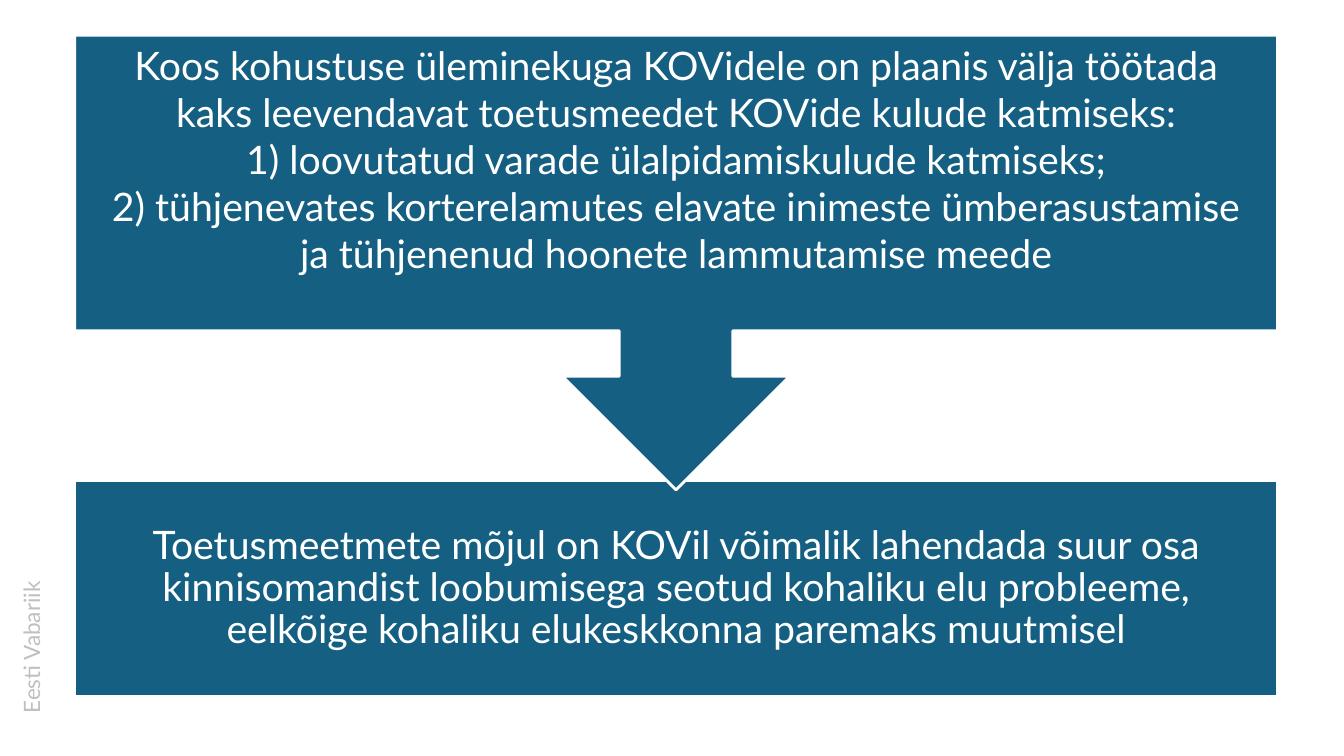
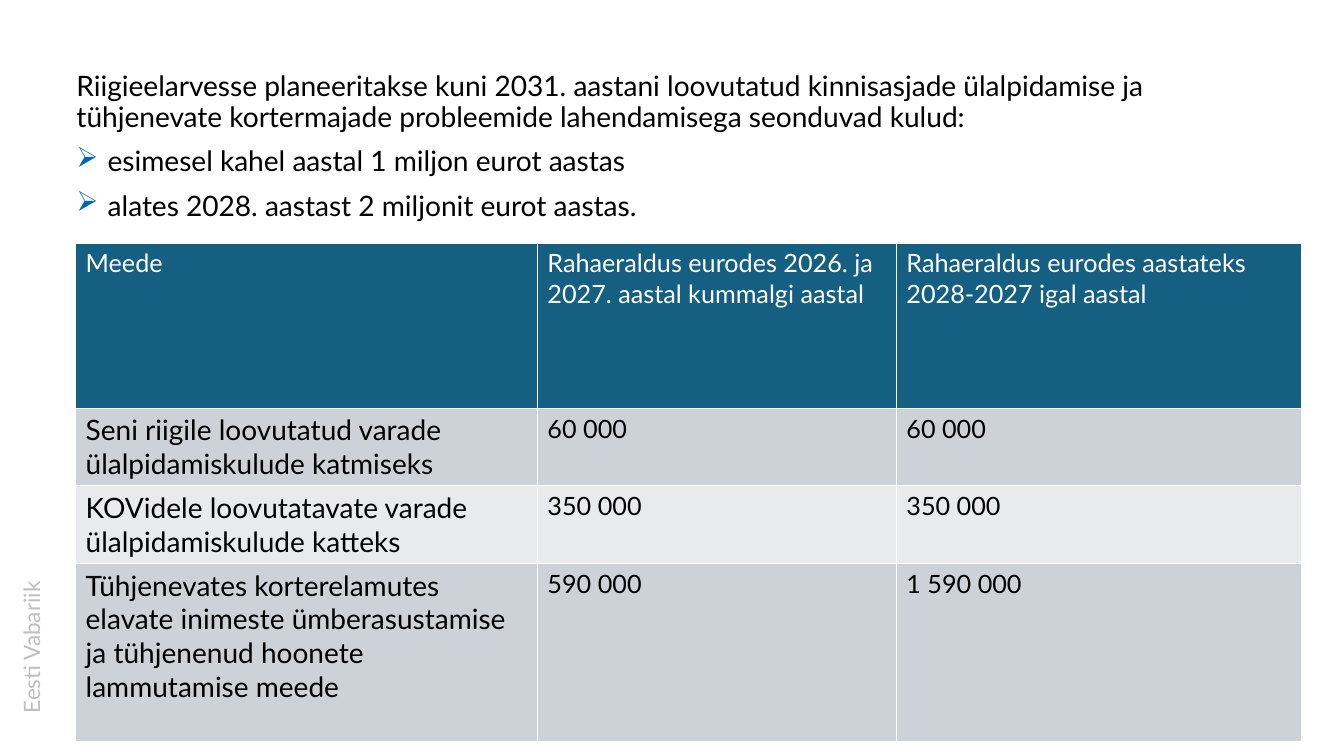
from lxml import etree
from pptx import Presentation
from pptx.dml.color import RGBColor
from pptx.enum import shapes, text
from pptx.oxml import ns
from pptx.util import Inches, Pt

# Shared look
FONT = "Lato"
TEAL, WHITE, BLACK = "156082", "FFFFFF", "000000"
LABEL_GREY, BULLET_BLUE = "BFBFBF", "0064B9"
BAND_FILLS = ["CCD2D8", "E8EAED"]
BLOCK_LEFT, BLOCK_WIDTH = 0.74, 11.93

CALLOUT_LINES = [
    "Koos kohustuse üleminekuga KOVidele on plaanis välja töötada "
    "kaks leevendavat toetusmeedet KOVide kulude katmiseks:",
    "1) loovutatud varade ülalpidamiskulude katmiseks;",
    "2) tühjenevates korterelamutes elavate inimeste ümberasustamise "
    "ja tühjenenud hoonete lammutamise meede",
]
RESULT = (
    "Toetusmeetmete mõjul on KOVil võimalik lahendada suur osa "
    "kinnisomandist loobumisega seotud kohaliku elu probleeme, "
    "eelkõige kohaliku elukeskkonna paremaks muutmisel"
)
BUDGET_INTRO = (
    "Riigieelarvesse planeeritakse kuni 2031. aastani loovutatud "
    "kinnisasjade ülalpidamise ja tühjenevate kortermajade probleemide "
    "lahendamisega seonduvad kulud:"
)
BUDGET_POINTS = [
    "esimesel kahel aastal 1 miljon eurot aastas",
    "alates 2028. aastast 2 miljonit eurot aastas.",
]
COLUMN_WIDTHS = [4.58, 3.56, 4.02]
ROW_HEIGHTS = [1.64, 0.77, 0.77, 1.77]
MEASURES = [
    ["Meede", "Rahaeraldus eurodes 2026. ja 2027. aastal kummalgi aastal",
     "Rahaeraldus eurodes aastateks 2028-2027 igal aastal"],
    ["Seni riigile loovutatud varade ülalpidamiskulude katmiseks",
     "60 000", "60 000"],
    ["KOVidele loovutatavate varade ülalpidamiskulude katteks",
     "350 000", "350 000"],
    ["Tühjenevates korterelamutes elavate inimeste ümberasustamise "
     "ja tühjenenud hoonete lammutamise meede", "590 000", "1 590 000"],
]


def color(value):
    return RGBColor.from_string(value)


def style(para, size, ink):
    para.font.name = FONT
    para.font.size = Pt(size)
    para.font.color.rgb = color(ink)


def add_text(page, at, lines, size, ink, align=text.PP_ALIGN.LEFT,
             anchor=text.MSO_ANCHOR.TOP, insets=(0.1, 0.05), spacing=None):
    """Add a text box; insets are the side and the top/bottom margin."""
    box = page.shapes.add_textbox(*map(Inches, at))
    frame = box.text_frame
    frame.word_wrap = True
    frame.vertical_anchor = anchor
    frame.margin_left = frame.margin_right = Inches(insets[0])
    frame.margin_top = frame.margin_bottom = Inches(insets[1])
    frame.text = "\n".join(lines)
    for para in frame.paragraphs:
        style(para, size, ink)
        para.alignment = align
        para.line_spacing = spacing
    return box


def add_block(page, kind, top, height):
    block = page.shapes.add_shape(
        kind, *map(Inches, (BLOCK_LEFT, top, BLOCK_WIDTH, height)))
    block.shadow.inherit = False
    block.fill.solid()
    block.fill.fore_color.rgb = color(TEAL)
    block.line.color.rgb = color(WHITE)
    block.line.width = Pt(2)
    return block


def add_bullet(para, indent):
    props = para._p.get_or_add_pPr()
    props.set("marL", str(Inches(indent)))
    props.set("indent", str(-Inches(indent)))
    tint = etree.SubElement(props, ns.qn("a:buClr"))
    etree.SubElement(tint, ns.qn("a:srgbClr"), val=BULLET_BLUE)
    etree.SubElement(props, ns.qn("a:buChar"), char="➢")


def fill_cell(cell, words, size, ink, fill):
    cell.text = words
    style(cell.text_frame.paragraphs[0], size, ink)
    props = cell._tc.get_or_add_tcPr()
    for side in ("a:lnL", "a:lnR", "a:lnT", "a:lnB"):
        border = etree.SubElement(props, ns.qn(side), w=str(Pt(1)))
        solid = etree.SubElement(border, ns.qn("a:solidFill"))
        etree.SubElement(solid, ns.qn("a:srgbClr"), val=WHITE)
    cell.fill.solid()
    cell.fill.fore_color.rgb = color(fill)


def add_measure_table(page, left, top):
    table = page.shapes.add_table(
        len(MEASURES), len(COLUMN_WIDTHS), Inches(left), Inches(top),
        Inches(sum(COLUMN_WIDTHS)), Inches(sum(ROW_HEIGHTS))).table
    for column, width in zip(table.columns, COLUMN_WIDTHS):
        column.width = Inches(width)
    for row_index, values in enumerate(MEASURES):
        table.rows[row_index].height = Inches(ROW_HEIGHTS[row_index])
        is_header = row_index == 0
        fill = TEAL if is_header else BAND_FILLS[(row_index - 1) % 2]
        for column_index, words in enumerate(values):
            size = 20 if column_index == 0 and not is_header else 18
            fill_cell(table.cell(row_index, column_index), words, size,
                      WHITE if is_header else BLACK, fill)


def add_page(deck):
    """Add a blank page with the shared side label."""
    page = deck.slides.add_slide(deck.slide_layouts[6])
    label = add_text(page, (-0.53, 6.15, 1.68, 0.37), ["Eesti Vabariik"],
                     16.1, LABEL_GREY)
    label.rotation = 270
    return page


def add_support_page(deck):
    page = add_page(deck)
    centre = text.PP_ALIGN.CENTER
    # Result block, overlapped by the tip of the callout
    add_block(page, shapes.MSO_SHAPE.RECTANGLE, 4.77, 2.14)
    add_text(page, (BLOCK_LEFT, 4.77, BLOCK_WIDTH, 2.14), [RESULT], 28, WHITE,
             centre, text.MSO_ANCHOR.MIDDLE, (0.22, 0.22), 0.9)
    # Callout pointing down
    callout = add_block(page, shapes.MSO_SHAPE.UP_ARROW_CALLOUT, 0.35, 4.51)
    callout.rotation = 180
    add_text(page, (BLOCK_LEFT, 0.35, BLOCK_WIDTH, 2.93), CALLOUT_LINES, 28,
             WHITE, centre, insets=(0.22, 0.06))


def add_budget_page(deck):
    page = add_page(deck)
    # Introduction and bullets
    body = add_text(page, (0.66, 0.67, 11.92, 1.7),
                    [BUDGET_INTRO] + BUDGET_POINTS, 20.1, BLACK, spacing=0.9)
    intro, *points = body.text_frame.paragraphs
    for para in points:
        para.space_before = Pt(10)
        add_bullet(para, 0.31)
    # Costs by measure
    add_measure_table(page, 0.75, 2.41)


def main():
    deck = Presentation()
    deck.slide_width, deck.slide_height = Inches(13.33), Inches(7.5)
    add_support_page(deck)
    add_budget_page(deck)
    deck.save("out.pptx")


if __name__ == "__main__":
    main()
